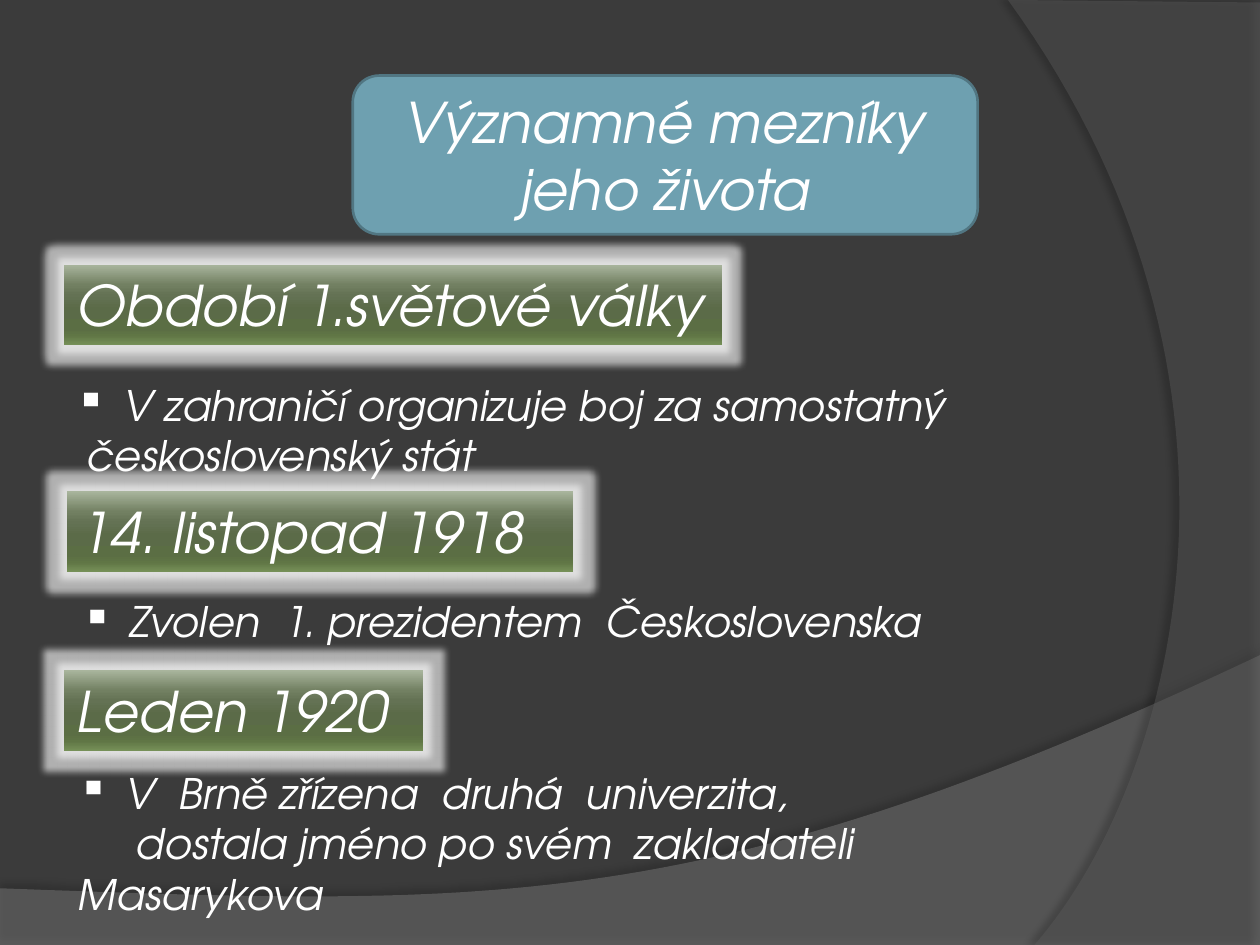
from dataclasses import dataclass

from lxml.etree import SubElement
from pptx import Presentation
from pptx.dml.color import RGBColor
from pptx.enum.shapes import MSO_SHAPE
from pptx.enum.text import MSO_ANCHOR, PP_ALIGN
from pptx.oxml.ns import qn
from pptx.util import Inches, Pt


@dataclass(frozen=True)
class Theme:
    font: str = "TeX Gyre Adventor"
    heading: int = 32
    body: int = 24
    background: str = "3B3B3B"
    text: str = "FFFFFF"
    title_fill: str = "6EA0B0"
    title_line: str = "517682"
    swoosh: str = "7F7F7F"
    arc: str = "5E5E5E"
    shadow: str = "000000"
    glow: str = "FFFFFF"
    band: tuple = ((0, "A9B59D"), (25, "728062"), (38, "647254"), (55, "5B6B48"),
                   (80, "5B6E44"), (88, "607645"), (100, "769058"))


THEME = Theme()
WIDTH, HEIGHT = Inches(10), Inches(7.5)
BULLET_INDENT = Inches(0.38)

TITLE = ("Významné mezníky jeho života", (28, 8, 49.6, 16.8))
HEADING_HEIGHT = 8.53
HEADINGS = [
    ("Období 1.světové války", 5.1, 28, 52.2),
    ("14. listopad 1918", 5.3, 52, 40.2),
    ("Leden 1920", 5.1, 70.93, 28.5),
]
NOTES = [
    ((5, 39.47, 72.6, 12.13), "V zahraničí organizuje boj za samostatný",
     "československý stát", 0.09),
    ((5.5, 62.4, 71.6, 6.67), "Zvolen  1. prezidentem  Československa", None, 0),
    ((5.2, 80.53, 83.9, 12.13), "V  Brně zřízena  druhá  univerzita,",
     "dostala jméno po svém  zakladateli  Masarykova", 0.46),
]
CURVES = [
    {"corners": [(0, 100), (100, 100)],
     "bezier": [(100, 69.33), (55.9, 97.2), (39.1, 95.87), (0, 94)],
     "color": THEME.swoosh, "alpha": 45, "shade": 35, "angle": 270},
    {"corners": [(100, 0.27), (100, 100)],
     "bezier": [(82.1, 100), (93.5, 82.53), (101.8, 40), (80, 0)],
     "color": THEME.arc, "alpha": 40, "shade": 45, "angle": 180},
]


def place(x, y):
    return round(WIDTH * x / 100), round(HEIGHT * y / 100)


def box(x, y, w, h):
    return *place(x, y), *place(w, h)


def rgb(value):
    return RGBColor.from_string(value)


def add_color(parent, value, alpha=100):
    color = SubElement(parent, qn("a:srgbClr"), val=value)
    if alpha < 100:
        SubElement(color, qn("a:alpha"), val=str(alpha * 1000))


def add_effect(sp, tag, color, alpha, **attrs):
    sp.shadow.inherit = False
    effects = sp._element.spPr.find(qn("a:effectLst"))
    effect = SubElement(effects, qn(tag), {k: str(v) for k, v in attrs.items()})
    add_color(effect, color, alpha)


def bezier(points, steps=60):
    for i in range(steps + 1):
        t = i / steps
        weights = ((1 - t) ** 3, 3 * t * (1 - t) ** 2, 3 * t * t * (1 - t), t ** 3)
        yield tuple(sum(w * p[axis] for w, p in zip(weights, points)) for axis in (0, 1))


def add_curve(s, corners, bezier_points, color, alpha, shade, angle):
    points = [place(*p) for p in corners + list(bezier(bezier_points))]
    builder = s.shapes.build_freeform(*points[0], scale=1.0)
    builder.add_line_segments(points[1:], close=True)
    sp = builder.convert_to_shape()
    sp.fill.solid()
    sp.fill.fore_color.rgb = rgb(color)
    fill = sp._element.spPr.find(qn("a:solidFill"))
    SubElement(fill[0], qn("a:alpha"), val=str(alpha * 1000))
    sp.line.fill.background()
    add_effect(sp, "a:outerShdw", THEME.shadow, shade, blurRad=Pt(4), dist=Pt(4),
               dir=angle * 60000, algn="ctr", rotWithShape=0)


def add_text(tf, text, *, size=THEME.body, align=PP_ALIGN.LEFT, bullet=None, indent=0,
             first=True):
    p = tf.paragraphs[0] if first else tf.add_paragraph()
    p.alignment = align
    r = p.add_run()
    r.text = text
    r.font.name = THEME.font
    r.font.size = Pt(size)
    r.font.italic = True
    r.font.color.rgb = rgb(THEME.text)
    props = p._p.get_or_add_pPr()
    if bullet:
        props.set("marL", str(BULLET_INDENT))
        props.set("indent", str(-BULLET_INDENT))
        SubElement(props, qn("a:buChar"), char=bullet)
    elif indent:
        props.set("indent", str(Inches(indent)))


def add_title(s, text, area):
    sp = s.shapes.add_shape(MSO_SHAPE.ROUNDED_RECTANGLE, *box(*area))
    sp.shadow.inherit = False
    sp.fill.solid()
    sp.fill.fore_color.rgb = rgb(THEME.title_fill)
    sp.line.color.rgb = rgb(THEME.title_line)
    sp.line.width = Pt(1.5)
    tf = sp.text_frame
    tf.word_wrap = True
    tf.vertical_anchor = MSO_ANCHOR.MIDDLE
    add_text(tf, text, size=THEME.heading, align=PP_ALIGN.CENTER)


def add_heading(s, text, x, y, w):
    sp = s.shapes.add_shape(MSO_SHAPE.RECTANGLE, *box(x, y, w, HEADING_HEIGHT))
    sp.fill.gradient()
    grad = sp._element.spPr.find(qn("a:gradFill"))
    stops = grad.find(qn("a:gsLst"))
    stops.clear()
    for position, color in THEME.band:
        add_color(SubElement(stops, qn("a:gs"), pos=str(position * 1000)), color)
    grad.find(qn("a:lin")).set("ang", "5400000")
    sp.line.fill.background()
    add_effect(sp, "a:glow", THEME.glow, 60, rad=Pt(8))
    tf = sp.text_frame
    tf.word_wrap = True
    tf.margin_right = 0
    tf.vertical_anchor = MSO_ANCHOR.TOP
    add_text(tf, text, size=THEME.heading)


def add_note(s, area, lead, rest, indent):
    tf = s.shapes.add_textbox(*box(*area)).text_frame
    tf.word_wrap = True
    add_text(tf, lead, bullet="▪")
    if rest:
        add_text(tf, rest, indent=indent, first=False)


def main():
    prs = Presentation()
    prs.slide_width, prs.slide_height = WIDTH, HEIGHT
    s = prs.slides.add_slide(prs.slide_layouts[6])
    s.background.fill.solid()
    s.background.fill.fore_color.rgb = rgb(THEME.background)
    for curve in CURVES:
        add_curve(s, curve["corners"], curve["bezier"], curve["color"],
                  curve["alpha"], curve["shade"], curve["angle"])
    add_title(s, *TITLE)
    for heading, note in zip(HEADINGS, NOTES):
        add_heading(s, *heading)
        add_note(s, *note)
    prs.save("out.pptx")


if __name__ == "__main__":
    main()
